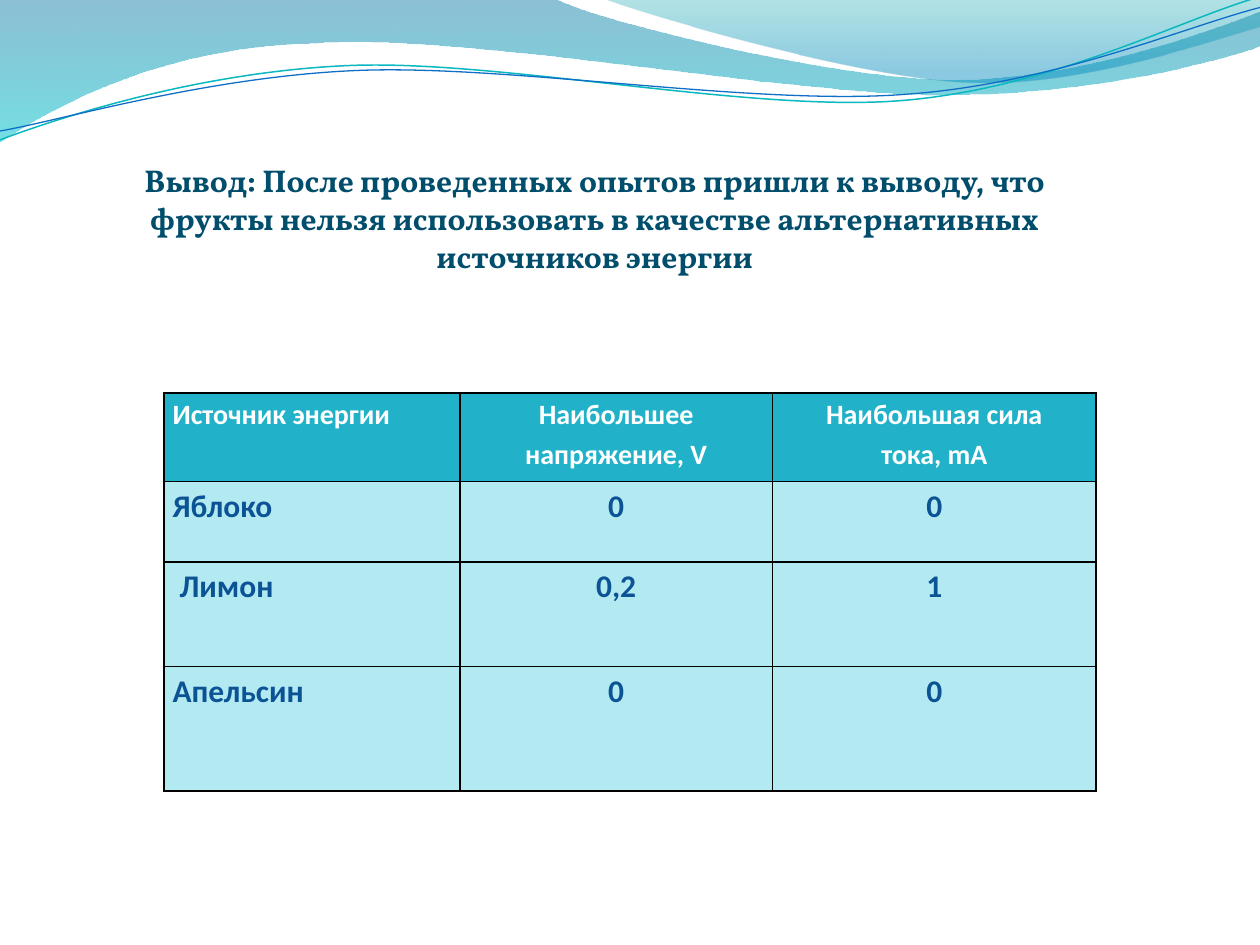
from math import cos, radians, sin
from pptx import Presentation as Deck
from pptx.dml.color import RGBColor as Rgb
from pptx.enum.text import PP_ALIGN as Align
from pptx.oxml.ns import qn
from pptx.util import Inches, Pt
from lxml.etree import SubElement as Sub

THEME = {
    "title": {"name": "Vollkorn", "size": 18, "color": "004E6C"},
    "head": {"name": "Calibri", "size": 16, "color": "FFFFFF"},
    "body": {"name": "Calibri", "size": 18, "color": "0B5394"},
    "fill": {"head": "21B2C9", "body": "B3EAF2"},
    "edge": "000000",
}

TITLE = ("Вывод: После проведенных опытов пришли к выводу, что фрукты "
         "нельзя использовать в качестве альтернативных источников энергии")

ROWS = [
    ["Источник энергии", "Наибольшее\nнапряжение, V", "Наибольшая сила\nтока, mA"],
    ["Яблоко", "0", "0"],
    [" Лимон", "0,2", "1"],
    ["Апельсин", "0", "0"],
]
WIDTHS = [2.35, 2.48, 2.57]
HEIGHTS = [0.7, 0.64, 0.83, 0.99]

BANDS = [
    {"stops": [(0, "0074A1", 45), (1, "00C6CF", 55)],
     "curve": [(0, 0), (4.4, -0.01), (4.76, 0.17, 6.64, 0.63, 7.58, 0.63),
               (8.53, 0.63, 9.58, 0.26, 10, 0.09), (10.01, 0.36),
               (9.83, 0.44, 8.7, 0.76, 7.46, 0.75),
               (6.22, 0.75, 3.82, 0.28, 2.57, 0.34),
               (1.29, 0.36, 0.46, 0.83, -0.01, 1.13), (0, 0)]},
    {"stops": [(0, "00A1A9", 30), (0.8, "008BBF", 45)],
     "curve": [(4.79, -0.01), (5.09, 0.11, 6.82, 0.62, 7.69, 0.65),
               (8.56, 0.69, 9.61, 0.32, 10, 0.21), (10, 0), (4.79, -0.01)]},
]
WAVES = [
    {"line": ("0AB8BF", 0.85), "mid": (4.99, 0.58),
     "curve": [(0, 1.11), (0.48, 0.93, 1.58, 0.57, 2.77, 0.52),
               (3.95, 0.47, 5.93, 0.89, 7.13, 0.8),
               (8.33, 0.71, 9.38, 0.15, 9.98, -0.02)]},
    {"line": ("0F6FC6", 0.75), "mid": (5, 0.59),
     "curve": [(0, 1.04), (0.47, 0.96, 1.64, 0.61, 2.83, 0.56),
               (4.03, 0.51, 5.97, 0.84, 7.17, 0.75),
               (8.36, 0.67, 9.41, 0.21, 10, 0.06)]},
]
TILT = -2.7


def turn(seg, mid, angle):
    c, s = cos(radians(angle)), sin(radians(angle))
    out = []
    for x, y in zip(seg[::2], seg[1::2]):
        dx, dy = x - mid[0], y - mid[1]
        out += [mid[0] + dx * c - dy * s, mid[1] + dx * s + dy * c]
    return tuple(out)


def draw(slide, curve, close):
    dots = [(Inches(x), Inches(y)) for seg in curve for x, y in zip(seg[::2], seg[1::2])]
    pen = slide.shapes.build_freeform(*dots[0])
    pen.add_line_segments(dots[1:], close=close)
    shape = pen.convert_to_shape()
    shape.shadow.inherit = False
    nodes = iter(list(shape.element.iter(qn("a:lnTo"))))
    for seg in curve[1:]:
        node = next(nodes)
        if len(seg) == 6:
            bend = node.makeelement(qn("a:cubicBezTo"))
            node.addprevious(bend)
            for part in (node, next(nodes), next(nodes)):
                bend.append(part[0])
                part.getparent().remove(part)
    return shape


def add_band(slide, band):
    shape = draw(slide, band["curve"], True)
    shape.line.fill.background()
    fill = shape.fill
    fill.gradient()
    fill.gradient_angle = 270
    for stop, (place, tint, _) in zip(fill.gradient_stops, band["stops"]):
        stop.position = place
        stop.color.rgb = Rgb.from_string(tint)
    tints = shape.element.spPr.find(qn("a:gradFill")).iter(qn("a:srgbClr"))
    for node, (_, _, alpha) in zip(tints, band["stops"]):
        Sub(node, qn("a:alpha"), val=str(alpha * 1000))


def add_wave(slide, wave):
    flat = [turn(seg, wave["mid"], -TILT) for seg in wave["curve"]]
    shape = draw(slide, flat, False)
    shape.rotation = TILT
    shape.fill.background()
    tint, width = wave["line"]
    shape.line.color.rgb = Rgb.from_string(tint)
    shape.line.width = Pt(width)


def write(para, text, style, form):
    run = para.add_run()
    run.text = text
    look = THEME[style]
    for key, value in {"name": look["name"], "size": Pt(look["size"]), "bold": True}.items():
        setattr(run.font, key, value)
    run.font.color.rgb = Rgb.from_string(look["color"])
    for key, value in form.items():
        setattr(para, key, value)


def add_edges(cell):
    props = cell._tc.get_or_add_tcPr()
    for side in "LRTB":
        line = Sub(props, qn("a:ln" + side), w=str(Pt(1)))
        Sub(Sub(line, qn("a:solidFill")), qn("a:srgbClr"), val=THEME["edge"])


def fill_cell(cell, text, style, col):
    add_edges(cell)
    cell.fill.solid()
    cell.fill.fore_color.rgb = Rgb.from_string(THEME["fill"][style])
    for side, gap in {"left": 0.07, "top": 0, "right": 0.07, "bottom": 0}.items():
        setattr(cell, "margin_" + side, Inches(gap))
    lines = text.split("\n")
    form = {"alignment": Align.CENTER if col else Align.LEFT,
            "line_spacing": 1.15,
            "space_after": Pt(10 if len(lines) == 1 else 0)}
    frame = cell.text_frame
    for i, line in enumerate(lines):
        write(frame.add_paragraph() if i else frame.paragraphs[0], line, style, form)


def add_grid(slide):
    box = map(Inches, (1.3, 3.12, sum(WIDTHS), sum(HEIGHTS)))
    table = slide.shapes.add_table(len(ROWS), len(WIDTHS), *box).table
    for col, width in zip(table.columns, WIDTHS):
        col.width = Inches(width)
    for r, (texts, height) in enumerate(zip(ROWS, HEIGHTS)):
        table.rows[r].height = Inches(height)
        for c, text in enumerate(texts):
            fill_cell(table.cell(r, c), text, "body" if r else "head", c)


def main():
    deck = Deck()
    deck.slide_width, deck.slide_height = Inches(10), Inches(7.5)
    slide = deck.slides.add_slide(deck.slide_layouts[6])
    for band in BANDS:
        add_band(slide, band)
    for wave in WAVES:
        add_wave(slide, wave)
    frame = slide.shapes.add_textbox(*map(Inches, (0.98, 1.23, 7.48, 1.01))).text_frame
    frame.word_wrap = True
    write(frame.paragraphs[0], TITLE, "title", {"alignment": Align.CENTER})
    add_grid(slide)
    deck.save("out.pptx")


if __name__ == "__main__":
    main()
